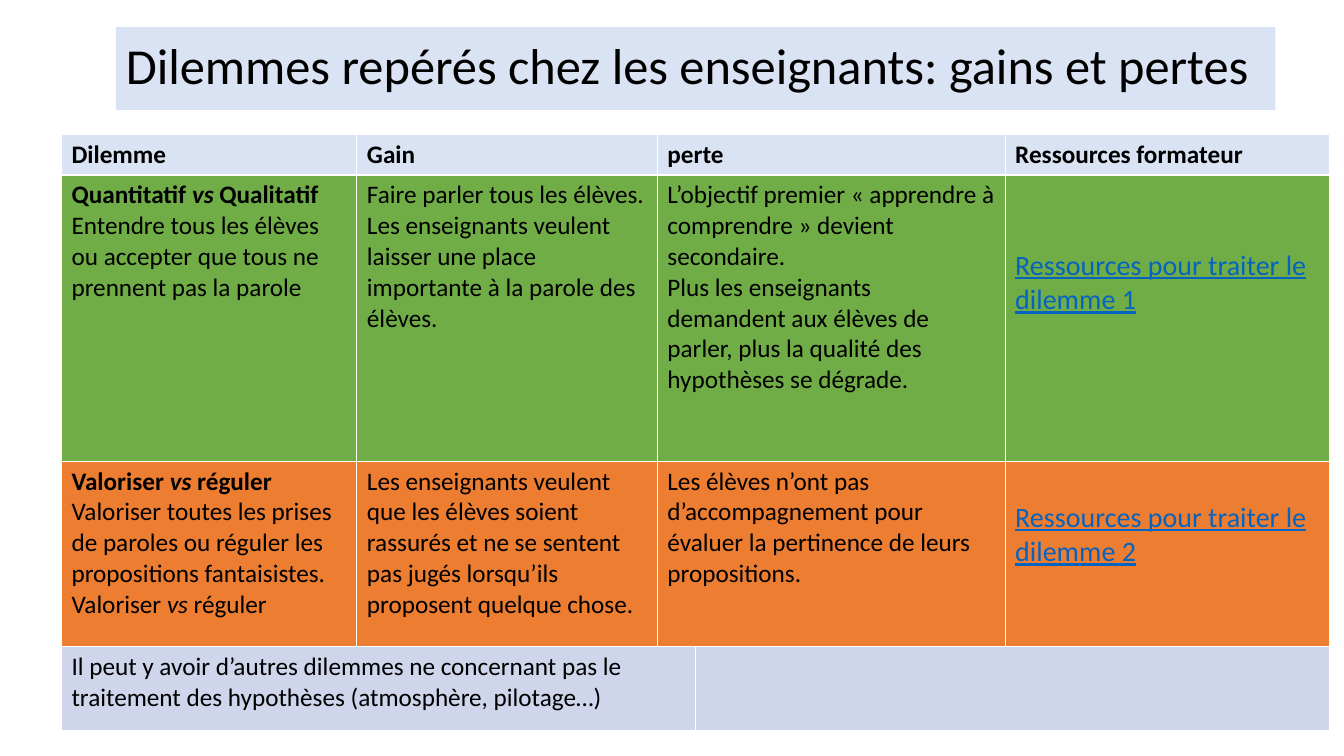
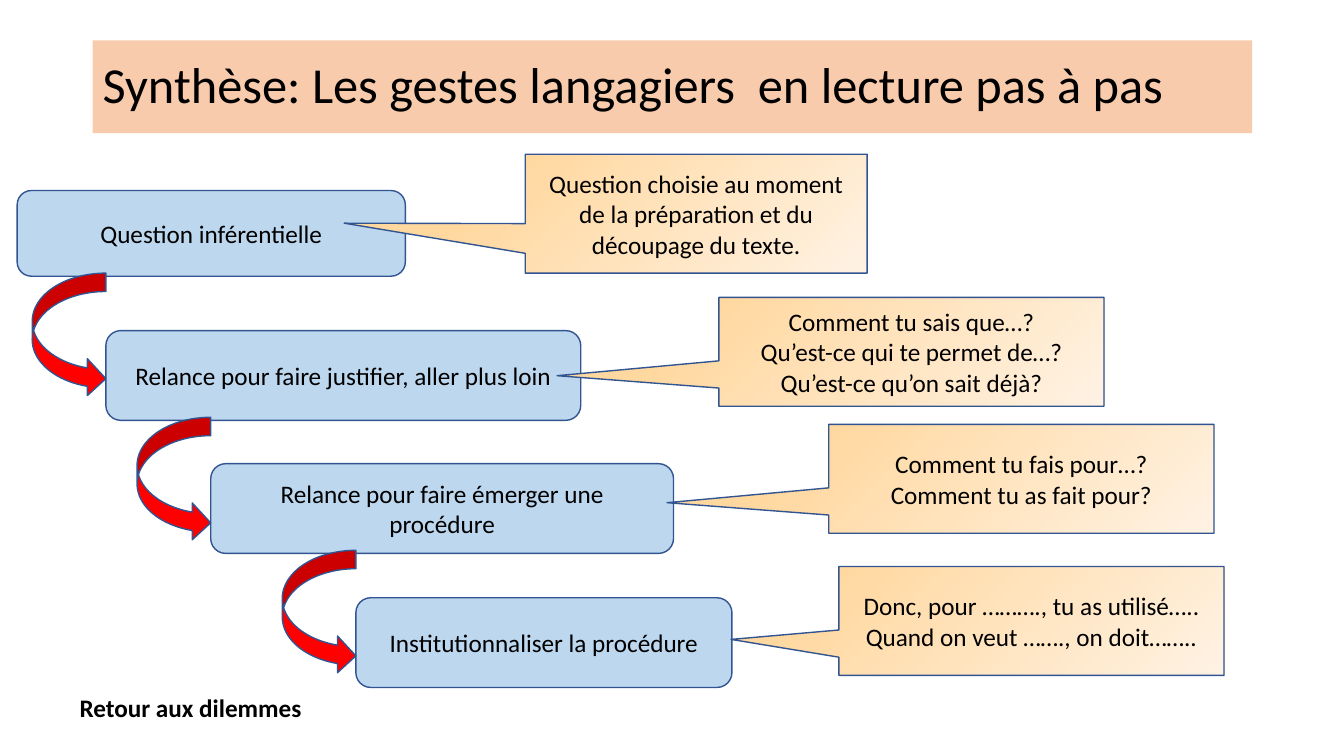
"""Two training slides: a table of teaching dilemmas and a staircase of language moves."""
from pptx import Presentation
from pptx.dml.color import RGBColor
from pptx.enum.shapes import MSO_SHAPE as Shape
from pptx.enum.text import MSO_ANCHOR as Anchor, PP_ALIGN as Align
from pptx.util import Inches, Pt

FONT = "Calibri"
BLACK, LINK, OUTLINE = "000000", "0563C1", "325491"
PALE_BLUE, PEACH, STEP_BLUE, RED = "DAE3F3", "F8CBAD", "BDD7EE", "FF0000"
CALLOUT_FADE = ("FFD8A0", "FFF2E3")

COLUMNS = (2.93, 2.98, 0.38, 3.07, 3.22)
ROWS = (0.33, 2.84, 1.84, 0.83)
ROW_FILLS = (PALE_BLUE, "70AD47", "ED7D31", "CFD5EA")
SPANS = ((1, 1, 2, 1),) * 3 + ((3, 2),)
LINK_DROPS = {1: 0.73, 2: 0.39}
DILEMMAS = (
    (["Dilemme"], ["Gain"], ["perte"], ["Ressources formateur"]),
    (
        ["Quantitatif |vs| Qualitatif",
         "Entendre tous les élèves ou accepter que tous ne prennent pas la parole"],
        ["Faire parler tous les élèves.",
         "Les enseignants veulent laisser une place importante à la parole des élèves."],
        ["L’objectif premier « apprendre à comprendre » devient secondaire.",
         "Plus les enseignants demandent aux élèves de parler, plus la qualité des "
         "hypothèses se dégrade."],
        ["Ressources pour traiter le dilemme 1"],
    ),
    (
        ["Valoriser |vs| réguler",
         "Valoriser toutes les prises de paroles ou réguler les propositions fantaisistes.",
         "Valoriser |vs| réguler"],
        ["Les enseignants veulent que les élèves soient rassurés et ne se sentent pas jugés "
         "lorsqu’ils proposent quelque chose."],
        ["Les élèves n’ont pas d’accompagnement pour évaluer la pertinence de leurs "
         "propositions."],
        ["Ressources pour traiter le dilemme 2"],
    ),
    (
        ["Il peut y avoir d’autres dilemmes ne concernant pas le traitement des hypothèses "
         "(atmosphère, pilotage…)"],
        [],
    ),
)

STEPS = (
    ("Question inférentielle", (0.17, 1.89, 3.85, 0.85)),
    ("Relance pour faire justifier, aller plus loin", (1.05, 3.28, 4.71, 0.89)),
    ("Relance pour faire émerger une procédure", (2.09, 4.6, 4.59, 0.89)),
    ("Institutionnaliser la procédure", (3.53, 5.93, 3.73, 0.89)),
)
CALLOUTS = (
    (["Question choisie au moment de la préparation et du découpage du texte."],
     (5.21, 1.53, 3.39, 1.18), (-1.03, 0.08)),
    (["Comment tu sais que…?", "Qu’est-ce qui te permet de…?", "Qu’est-ce qu’on sait déjà?"],
     (7.13, 2.95, 3.82, 1.08), (-0.92, 0.22)),
    (["Comment tu fais pour…?", "Comment tu as fait pour?"],
     (8.22, 4.21, 3.82, 1.08), (-0.92, 0.22)),
    (["Donc, pour ………., tu as utilisé…..", "Quand on veut ……., on doit…….."],
     (8.32, 5.62, 3.82, 1.08), (-0.78, 0.17)),
)
ARROW_WIDTH, ARROW_HEIGHT, ARROW_OVERLAP = 0.73, 1.23, 0.03


def colour(value):
    return RGBColor.from_string(value)


def write(frame, lines, size=18, ink=BLACK, bold_lines=0, align=Align.LEFT, underline=False):
    """Write one paragraph per line; text between bars is italic."""
    frame.word_wrap = True
    for index, line in enumerate(lines):
        para = frame.paragraphs[0] if index == 0 else frame.add_paragraph()
        para.alignment = align
        font = para.font
        font.name, font.size, font.bold = FONT, Pt(size), index < bold_lines
        font.color.rgb = colour(ink)
        for part, text in enumerate(line.split("|")):
            span = para.add_run()
            span.text = text
            span.font.color.rgb = colour(ink)
            span.font.bold = index < bold_lines
            if part % 2:
                span.font.italic = True
            if underline:
                span.font.underline = True


def add_box(page, kind, place, fill, outlined=True):
    """Add a flat shape; a pair of fills makes a diagonal fade."""
    box = page.shapes.add_shape(kind, *map(Inches, place))
    box.shadow.inherit = False
    if isinstance(fill, tuple):
        box.fill.gradient()
        box.fill.gradient_angle = 315
        for stop, value in zip(box.fill.gradient_stops, fill):
            stop.color.rgb = colour(value)
    else:
        box.fill.solid()
        box.fill.fore_color.rgb = colour(fill)
    if outlined:
        box.line.color.rgb = colour(OUTLINE)
        box.line.width = Pt(1)
    else:
        box.line.fill.background()
    box.text_frame.vertical_anchor = Anchor.MIDDLE
    return box


def add_page(deck, title, place, fill):
    """Add a blank page with a coloured title band."""
    page = deck.slides.add_slide(deck.slide_layouts[6])
    band = add_box(page, Shape.RECTANGLE, place, fill, outlined=False)
    write(band.text_frame, [title], size=36)
    band.text_frame.paragraphs[0].line_spacing = 0.9
    return page


def add_dilemmas(page):
    """Add the table of dilemmas with its merged cells."""
    place = (0.61, 1.33, sum(COLUMNS), sum(ROWS))
    table = page.shapes.add_table(len(ROWS), len(COLUMNS), *map(Inches, place)).table
    for column, width in zip(table.columns, COLUMNS):
        column.width = Inches(width)
    for row, height in enumerate(ROWS):
        table.rows[row].height = Inches(height)
        column = 0
        for lines, span in zip(DILEMMAS[row], SPANS[row]):
            cell = table.cell(row, column)
            if span > 1:
                cell.merge(table.cell(row, column + span - 1))
            cell.fill.solid()
            cell.fill.fore_color.rgb = colour(ROW_FILLS[row])
            if row in LINK_DROPS and column == len(COLUMNS) - 1:
                cell.margin_top = Inches(LINK_DROPS[row])
                write(cell.text_frame, lines, size=20, ink=LINK, underline=True)
            else:
                headed = row == 0 or (column == 0 and row in LINK_DROPS)
                write(cell.text_frame, lines, bold_lines=int(headed))
            column += span


def add_staircase(page):
    """Add the steps, their callouts and the arrows between steps."""
    for text, place in STEPS:
        step = add_box(page, Shape.ROUNDED_RECTANGLE, place, STEP_BLUE)
        write(step.text_frame, [text], align=Align.CENTER)
    for lines, place, tip in CALLOUTS:
        callout = add_box(page, Shape.RECTANGULAR_CALLOUT, place, CALLOUT_FADE)
        callout.adjustments[0], callout.adjustments[1] = tip
        write(callout.text_frame, lines, align=Align.CENTER)
    for (_, (_, top, _, height)), (_, (next_left, *_)) in zip(STEPS, STEPS[1:]):
        place = (next_left - ARROW_WIDTH, top + height - ARROW_OVERLAP, ARROW_WIDTH, ARROW_HEIGHT)
        add_box(page, Shape.CURVED_RIGHT_ARROW, place, RED)


def main():
    deck = Presentation()
    deck.slide_width, deck.slide_height = Inches(13.33), Inches(7.5)
    page = add_page(deck, "Dilemmes repérés chez les enseignants: gains et pertes",
                    (1.15, 0.27, 11.5, 0.82), PALE_BLUE)
    add_dilemmas(page)
    page = add_page(deck, "Synthèse: Les gestes langagiers  en lecture pas à pas",
                    (0.92, 0.4, 11.5, 0.92), PEACH)
    add_staircase(page)
    back = page.shapes.add_textbox(*map(Inches, (0.69, 6.82, 2.45, 0.4)))
    write(back.text_frame, ["Retour aux dilemmes"], bold_lines=1)
    deck.save("out.pptx")


if __name__ == "__main__":
    main()
